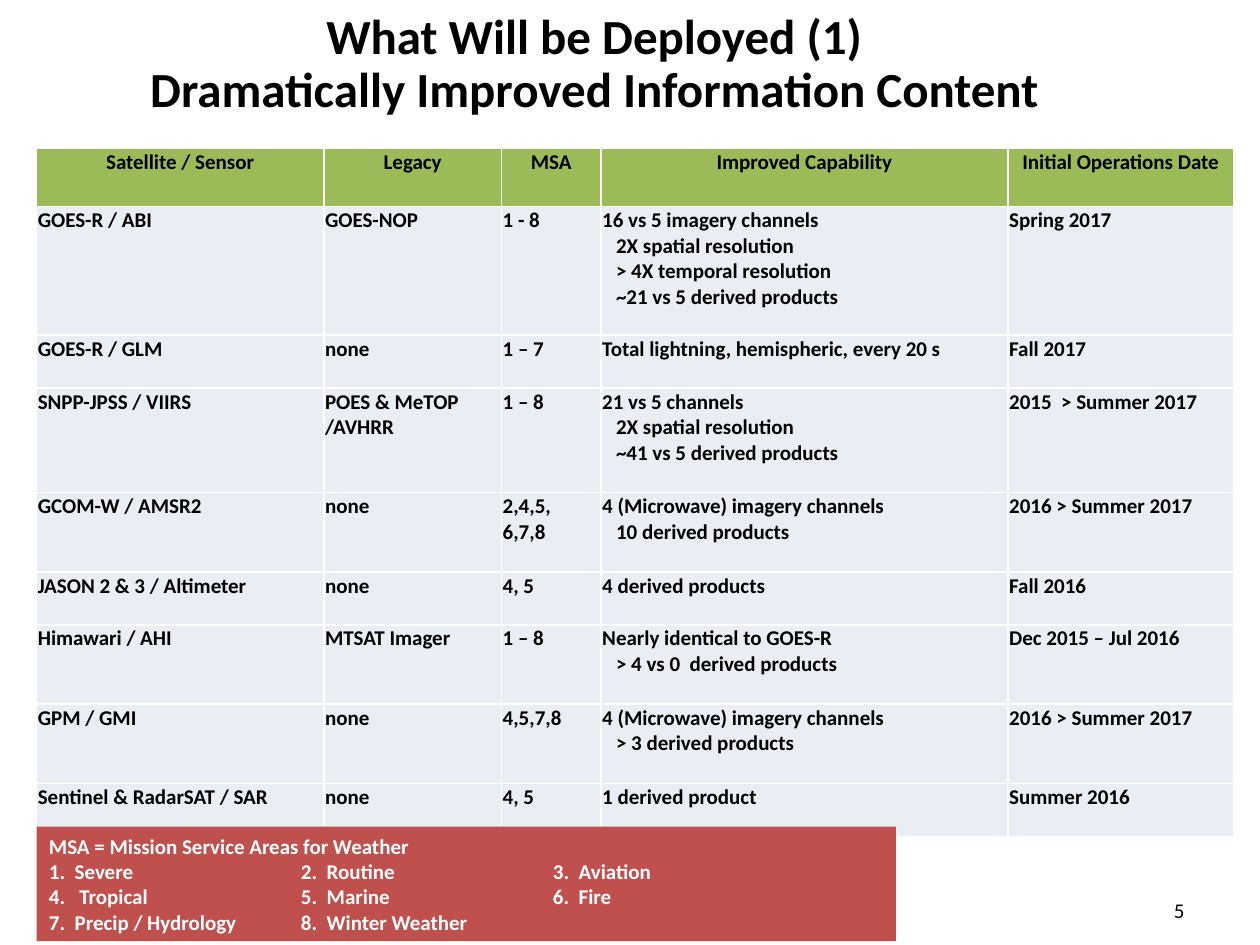
from lxml.etree import SubElement
from pptx import Presentation
from pptx.dml.color import RGBColor
from pptx.enum.shapes import MSO_SHAPE as Shape
from pptx.enum.text import MSO_ANCHOR as Anchor, MSO_AUTO_SIZE as AutoSize, PP_ALIGN as Align
from pptx.oxml.ns import qn
from pptx.util import Inches, Pt


def rgb(value):
    return RGBColor.from_string(value)


def style(p, size=12, color="000000", bold=True, align=Align.LEFT):
    p.alignment = align
    for r in p.runs:
        r.font.name, r.font.size, r.font.bold = "Calibri", Pt(size), bold
        r.font.color.rgb = rgb(color)


prs = Presentation()
prs.slide_width, prs.slide_height = Inches(10), Inches(7.5)
s = prs.slides.add_slide(prs.slide_layouts[5])

# Title
title = s.shapes.title
title.left, title.top, title.width, title.height = map(Inches, (0.84, 0.1, 7.75, 0.88))
tf = title.text_frame
tf.text = "What Will be Deployed (1)\nDramatically Improved Information Content"
tf.vertical_anchor, tf.auto_size = Anchor.BOTTOM, AutoSize.NONE
for p in tf.paragraphs:
    style(p, 28, align=Align.CENTER)
    p.line_spacing, p.space_before = Pt(30), Pt(0)

# Satellite table: a line starting with "-" is indented
rows = [
    ("Satellite / Sensor", "Legacy", "MSA", "Improved Capability", "Initial Operations Date"),
    ("GOES-R / ABI", "GOES-NOP", "1 - 8",
     "16 vs 5 imagery channels\n-2X spatial resolution\n-> 4X temporal resolution\n"
     "-~21 vs 5 derived products", "Spring 2017"),
    ("GOES-R / GLM", "none", "1 – 7", "Total lightning, hemispheric, every 20 s", "Fall 2017"),
    ("SNPP-JPSS / VIIRS", "POES & MeTOP\n/AVHRR", "1 – 8",
     "21 vs 5 channels\n-2X spatial resolution\n-~41 vs 5 derived products",
     "2015  > Summer 2017"),
    ("GCOM-W / AMSR2", "none", "2,4,5,\n6,7,8",
     "4 (Microwave) imagery channels\n-10 derived products", "2016 > Summer 2017"),
    ("JASON 2 & 3 / Altimeter", "none", "4, 5", "4 derived products", "Fall 2016"),
    ("Himawari / AHI", "MTSAT Imager", "1 – 8",
     "Nearly identical to GOES-R\n-> 4 vs 0  derived products", "Dec 2015 – Jul 2016"),
    ("GPM / GMI", "none", "4,5,7,8",
     "4 (Microwave) imagery channels\n-> 3 derived products", "2016 > Summer 2017"),
    ("Sentinel & RadarSAT / SAR", "none", "4, 5", "1 derived product", "Summer 2016"),
]
col_widths = (2.28, 1.41, 0.79, 3.23, 1.79)
row_heights = (0.46, 1.02, 0.42, 0.83, 0.63, 0.42, 0.63, 0.63, 0.42)
table = s.shapes.add_table(len(rows), len(col_widths), Inches(0.29), Inches(1.18),
                           Inches(sum(col_widths)), Inches(sum(row_heights))).table
for col, width in zip(table.columns, col_widths):
    col.width = Inches(width)
for i, (row, height) in enumerate(zip(rows, row_heights)):
    table.rows[i].height = Inches(height)
    for j, text in enumerate(row):
        cell = table.cell(i, j)
        cell.margin_left = cell.margin_right = cell.margin_top = Inches(0.01)
        cell.margin_bottom = 0
        tcPr = cell._tc.get_or_add_tcPr()
        for side in ("a:lnL", "a:lnR", "a:lnT", "a:lnB"):
            ln = SubElement(tcPr, qn(side), w=str(Pt(1)))
            SubElement(SubElement(ln, qn("a:solidFill")), qn("a:srgbClr"), val="FFFFFF")
        cell.fill.solid()
        cell.fill.fore_color.rgb = rgb("E9EDF4" if i else "9BBB59")
        cell.text_frame.text = text
        for p in cell.text_frame.paragraphs:
            if p.text.startswith("-"):
                p.text = p.text[1:]
                p._p.get_or_add_pPr().set("marL", str(Inches(0.11)))
            style(p, align=Align.LEFT if i else Align.CENTER)

# Legend of service areas, in tabbed columns
legend = s.shapes.add_shape(Shape.RECTANGLE, Inches(0.29), Inches(6.56), Inches(6.82), Inches(0.91))
legend.shadow.inherit = False
legend.fill.solid()
legend.fill.fore_color.rgb = rgb("C0504D")
legend.line.fill.background()
tf = legend.text_frame
tf.word_wrap, tf.auto_size = True, AutoSize.SHAPE_TO_FIT_TEXT
tf.text = ("MSA = Mission Service Areas for Weather\n"
           "1.  Severe\t2.  Routine\t3.  Aviation\n"
           "4.   Tropical\t5.  Marine\t6.  Fire\n"
           "7.  Precip / Hydrology\t8.  Winter Weather")
for p in tf.paragraphs:
    tabs = SubElement(p._p.get_or_add_pPr(), qn("a:tabLst"))
    for stop in (2, 4):
        SubElement(tabs, qn("a:tab"), pos=str(Inches(stop)), algn="l")
    style(p, color="FFFFFF")

# Slide number
sp = s.shapes.add_textbox(Inches(7.17), Inches(7.02), Inches(2.33), Inches(0.4))
tf = sp.text_frame
tf.word_wrap, tf.vertical_anchor = True, Anchor.MIDDLE
tf.text = "5"
style(tf.paragraphs[0], bold=False, align=Align.RIGHT)

prs.save("out.pptx")
